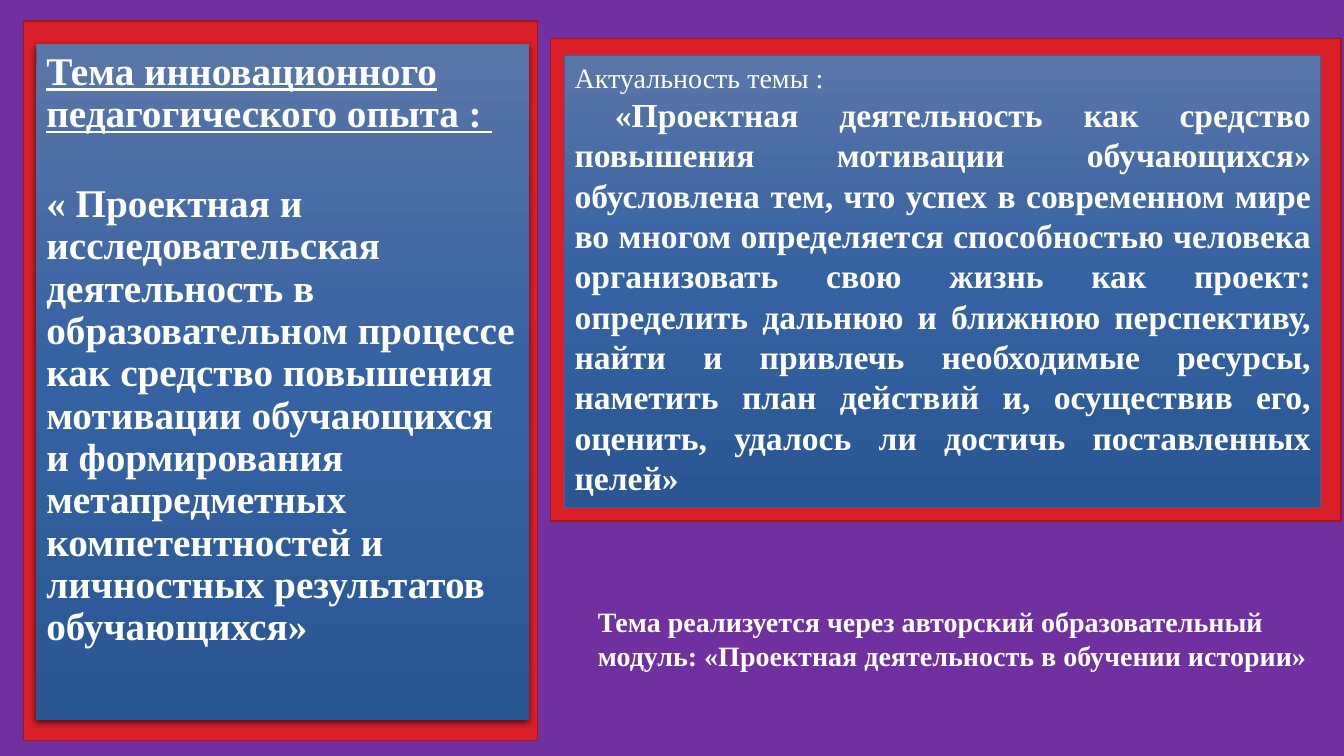
from copy import deepcopy

from lxml.etree import SubElement
from pptx import Presentation
from pptx.dml.color import RGBColor
from pptx.enum.shapes import MSO_SHAPE
from pptx.enum.text import MSO_ANCHOR, MSO_AUTO_SIZE, PP_ALIGN
from pptx.oxml.ns import qn
from pptx.util import Inches, Pt

COLORS = {
    "background": "7030A0",
    "frame": "DA1F28",
    "frame_line": "A1171E",
    "panel_line": "39639D",
    "panel_top": "5976A9",
    "panel_middle": "3462A2",
    "panel_bottom": "2A5794",
    "text": "FFFFFF",
    "shadow": "000000",
}


def rgb(name):
    return RGBColor.from_string(COLORS[name])


class SlideBuilder:
    font = "Times New Roman"

    def __init__(self, prs):
        self.width, self.height = prs.slide_width, prs.slide_height
        self.slide = prs.slides.add_slide(prs.slide_layouts[5])
        fill = self.slide.background.fill
        fill.solid()
        fill.fore_color.rgb = rgb("background")

    def box(self, left, top, width, height):
        return (
            round(self.width * left / 100),
            round(self.height * top / 100),
            round(self.width * width / 100),
            round(self.height * height / 100),
        )

    def rectangle(self, area, line, weight):
        sp = self.slide.shapes.add_shape(MSO_SHAPE.RECTANGLE, *self.box(*area))
        sp.shadow.inherit = False
        sp.line.color.rgb = rgb(line)
        sp.line.width = Pt(weight)
        return sp

    def frame(self, area):
        sp = self.rectangle(area, "frame_line", 1)
        sp.fill.solid()
        sp.fill.fore_color.rgb = rgb("frame")

    def gradient(self, sp):
        sp.fill.gradient()
        sp.fill.gradient_angle = 270
        stops = sp._element.spPr.find(qn("a:gradFill")).find(qn("a:gsLst"))
        stops.insert(1, deepcopy(stops[0]))
        names = ("panel_top", "panel_middle", "panel_bottom")
        for stop, name, position in zip(sp.fill.gradient_stops, names, (0, 0.5, 1)):
            stop.color.rgb = rgb(name)
            stop.position = position

    def shadow(self, sp):
        sp.shadow.inherit = False
        effects = sp._element.spPr.find(qn("a:effectLst"))
        outer = SubElement(effects, qn("a:outerShdw"), blurRad=str(Pt(4.5)),
                           dist=str(Pt(1.5)), dir="5400000", rotWithShape="0")
        color = SubElement(outer, qn("a:srgbClr"), val=COLORS["shadow"])
        SubElement(color, qn("a:alpha"), val="63000")

    def panel(self, area):
        sp = self.rectangle(area, "panel_line", 0.5)
        self.gradient(sp)
        return self.prepare(sp.text_frame)

    def title(self, area):
        sp = self.slide.shapes.title
        self.slide.shapes._spTree.append(sp._element)
        sp.left, sp.top, sp.width, sp.height = self.box(*area)
        self.gradient(sp)
        sp.line.fill.background()
        self.shadow(sp)
        return self.prepare(sp.text_frame, MSO_ANCHOR.MIDDLE)

    def textbox(self, area):
        sp = self.slide.shapes.add_textbox(*self.box(*area))
        return self.prepare(sp.text_frame)

    def prepare(self, tf, anchor=MSO_ANCHOR.TOP):
        tf.word_wrap = True
        tf.auto_size = MSO_AUTO_SIZE.NONE
        tf.vertical_anchor = anchor
        return tf

    def paragraph(self, tf, text, size, bold=True, underline=False,
                  align=PP_ALIGN.LEFT, spacing=1.0, before=0, indent=0):
        p = tf.paragraphs[0] if not tf.paragraphs[0].runs else tf.add_paragraph()
        p.alignment = align
        p.line_spacing = spacing
        p.space_before = Pt(before)
        if indent:
            p._p.get_or_add_pPr().set("indent", str(Inches(indent)))
        r = p.add_run()
        r.text = text
        r.font.name = self.font
        r.font.size = Pt(size)
        r.font.bold = bold
        r.font.underline = underline
        r.font.color.rgb = rgb("text")


def main():
    prs = Presentation()
    prs.slide_width, prs.slide_height = Inches(13.33), Inches(7.5)
    s = SlideBuilder(prs)

    s.frame((40.96, 5.07, 58.81, 63.87))
    s.frame((1.73, 2.8, 38.26, 95.2))

    topic = s.title((2.7, 5.87, 36.68, 89.33))
    topic.margin_bottom = Inches(0.68)
    s.paragraph(topic, "Тема инновационного педагогического опыта : ", 28,
                underline=True, spacing=0.9)
    s.paragraph(topic, "« Проектная и исследовательская деятельность в образовательном "
                "процессе как средство повышения мотивации обучающихся и формирования "
                "метапредметных компетентностей и личностных результатов обучающихся»",
                28, spacing=0.9, before=34)

    relevance = s.panel((42.01, 7.33, 56.26, 59.73))
    s.paragraph(relevance, "Актуальность темы :", 20, bold=False)
    s.paragraph(relevance, "«Проектная деятельность как средство повышения мотивации "
                "обучающихся» обусловлена тем, что успех в современном мире во многом "
                "определяется способностью человека организовать свою жизнь как проект: "
                "определить дальнюю и ближнюю перспективу, найти и привлечь необходимые "
                "ресурсы, наметить план действий и, осуществив его, оценить, удалось ли "
                "достичь поставленных целей»",
                24, align=PP_ALIGN.JUSTIFY, indent=0.4)

    module = s.textbox((43.74, 79.33, 56.26, 10.27))
    s.paragraph(module, "Тема реализуется через авторский образовательный модуль: "
                "«Проектная деятельность в обучении истории»", 20)

    prs.save("out.pptx")


if __name__ == "__main__":
    main()
